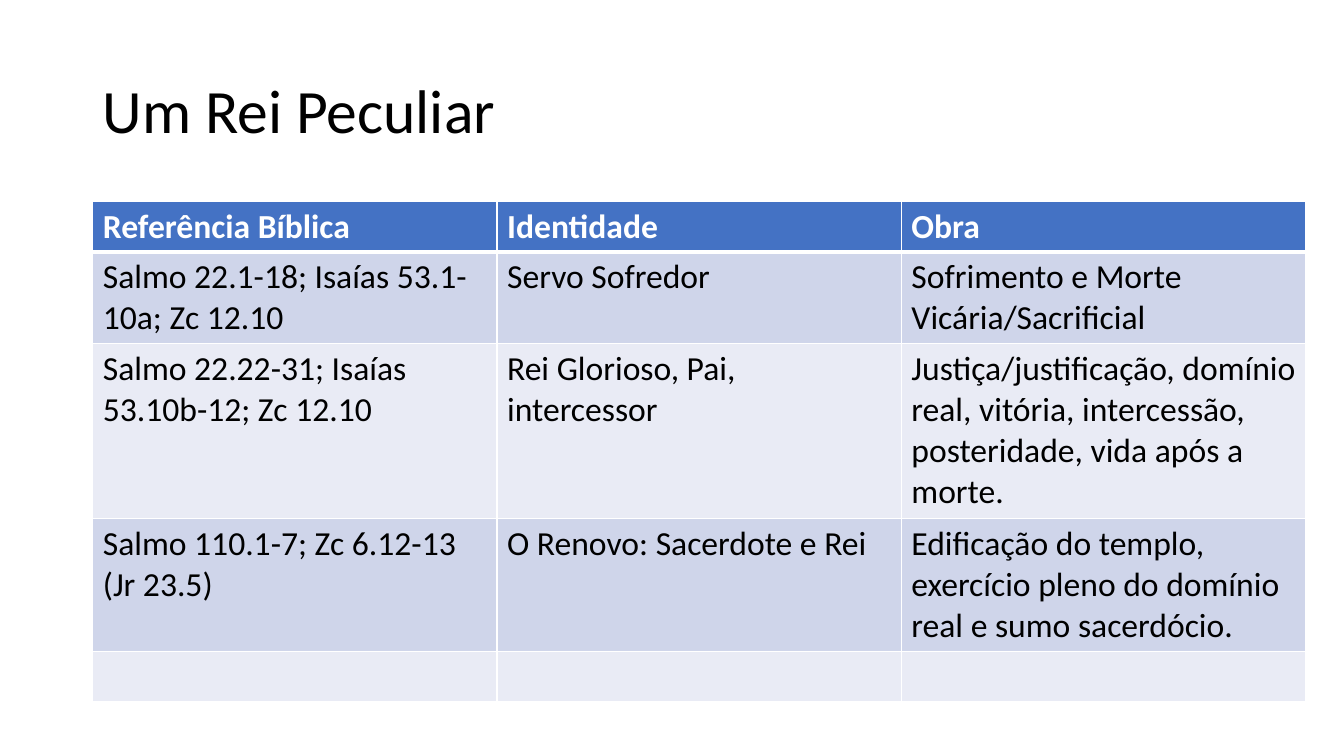
from lxml import etree
from pptx import Presentation
from pptx.dml.color import RGBColor
from pptx.enum.text import MSO_ANCHOR
from pptx.oxml.ns import qn
from pptx.util import Inches, Pt

BLACK = RGBColor(0x00, 0x00, 0x00)
WHITE = RGBColor(0xFF, 0xFF, 0xFF)
BLUE = RGBColor(0x44, 0x72, 0xC4)
BANDS = [RGBColor(0xE9, 0xEB, 0xF5), RGBColor(0xCF, 0xD5, 0xEA)]
MIDDLE = MSO_ANCHOR.MIDDLE

ROWS = [
    ["Referência Bíblica", "Identidade", "Obra"],
    ["Salmo 22.1-18; Isaías 53.1-10a; Zc 12.10", "Servo Sofredor",
     "Sofrimento e Morte Vicária/Sacrificial"],
    ["Salmo 22.22-31; Isaías 53.10b-12; Zc 12.10",
     "Rei Glorioso, Pai, intercessor",
     "Justiça/justificação, domínio real, vitória, intercessão, "
     "posteridade, vida após a morte."],
    ["Salmo 110.1-7; Zc 6.12-13 (Jr 23.5)", "O Renovo: Sacerdote e Rei",
     "Edificação do templo, exercício pleno do domínio real e sumo sacerdócio."],
    ["", "", ""],
]
HEIGHTS = [0.5, 0.91, 1.73, 1.32, 0.5]


class Deck:
    font = "Calibri"

    def __init__(self, slide):
        self.slide = slide

    def add_text(self, para, text, size, color, bold=False):
        run = para.add_run()
        run.text = text
        run.font.name = self.font
        run.font.size = Pt(size)
        run.font.bold = bold
        run.font.color.rgb = color

    def title(self, text, left, top, width, height):
        box = self.slide.shapes.add_textbox(
            Inches(left), Inches(top), Inches(width), Inches(height))
        frame = box.text_frame
        frame.word_wrap = True
        frame.vertical_anchor = MIDDLE
        para = frame.paragraphs[0]
        para.line_spacing = 0.9
        self.add_text(para, text, 44, BLACK)

    def edges(self, cell, top, bottom):
        props = cell._tc.get_or_add_tcPr()
        widths = {"a:lnL": 1, "a:lnR": 1, "a:lnT": top, "a:lnB": bottom}
        for index, (tag, width) in enumerate(widths.items()):
            line = etree.Element(qn(tag), w=str(Pt(width)))
            fill = etree.SubElement(line, qn("a:solidFill"))
            etree.SubElement(fill, qn("a:srgbClr"), val=str(WHITE))
            props.insert(index, line)

    def table(self, rows, heights, left, top, width):
        count = len(rows[0])
        table = self.slide.shapes.add_table(
            len(rows), count, Inches(left), Inches(top),
            Inches(width), Inches(sum(heights))).table
        for col in table.columns:
            col.width = Inches(width / count)
        for r, texts in enumerate(rows):
            table.rows[r].height = Inches(heights[r])
            head = r == 0
            for c, text in enumerate(texts):
                cell = table.cell(r, c)
                cell.fill.solid()
                cell.fill.fore_color.rgb = BLUE if head else BANDS[r % 2]
                self.edges(cell, 3 if r == 1 else 1, 3 if head else 1)
                if text:
                    self.add_text(cell.text_frame.paragraphs[0], text, 24,
                                  WHITE if head else BLACK, head)


def main():
    prs = Presentation()
    prs.slide_width = Inches(13.33)
    prs.slide_height = Inches(7.5)
    deck = Deck(prs.slides.add_slide(prs.slide_layouts[6]))
    deck.title("Um Rei Peculiar", 0.92, 0.4, 11.5, 1.45)
    deck.table(ROWS, HEIGHTS, 0.92, 2, 12.03)
    prs.save("out.pptx")


if __name__ == "__main__":
    main()
